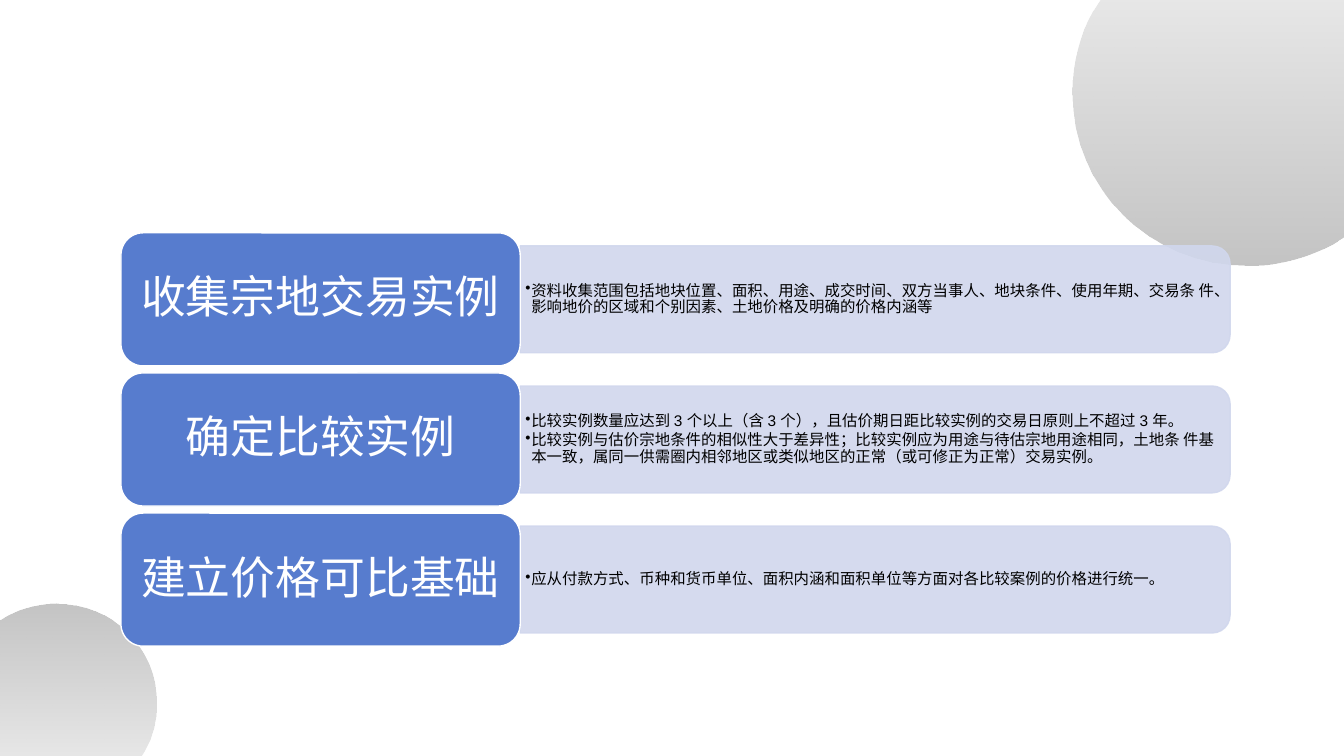
from lxml import etree
from pptx import Presentation, util as u
from pptx.dml.color import RGBColor
from pptx.enum import shapes, text
from pptx.oxml.ns import qn

W, H = 13.33, 7.5
WHITE = RGBColor(0xFF, 0xFF, 0xFF)
BLACK = RGBColor(0, 0, 0)
BLUE = RGBColor(0x57, 0x7C, 0xCE)
PALE = RGBColor(0xD1, 0xD7, 0xED)

# Circle cut by a corner, in hundredths of an inch: straight edges, then curves
CUT_EDGES = [(28, 0), (269, 0), (269, 234), (256, 242)]
CUT_CURVES = [  # two control points and an end point each
    [(231, 255), (203, 263), (173, 263)],
    [(77, 263), (0, 187), (0, 92)],
    [(0, 63), (7, 35), (21, 11)],
]

# Steps: left and top of the list, row pitch, sizes of the parts
LEFT, TOP, PITCH, ROW_H = 1.2, 2.31, 1.39, 1.32
LABEL_W, BAR_W, BAR_H = 3.96, 7.04, 1.06
STEPS = [
    ("收集宗地交易实例", [
        "资料收集范围包括地块位置、面积、用途、成交时间、双方当事人、地块条件、使用年期、交易条 件、"
        "影响地价的区域和个别因素、土地价格及明确的价格内涵等"]),
    ("确定比较实例", [
        "比较实例数量应达到 3 个以上（含 3 个），且估价期日距比较实例的交易日原则上不超过 3 年。",
        "比较实例与估价宗地条件的相似性大于差异性；比较实例应为用途与待估宗地用途相同，土地条 件基"
        "本一致，属同一供需圈内相邻地区或类似地区的正常（或可修正为正常）交易实例。"]),
    ("建立价格可比基础", [
        "应从付款方式、币种和货币单位、面积内涵和面积单位等方面对各比较案例的价格进行统一。"]),
]


def set_alpha(parent, percent):
    """Make every RGB colour below parent partly transparent."""
    for clr in parent.iter(qn("a:srgbClr")):
        etree.SubElement(clr, qn("a:alpha")).set("val", str(percent * 1000))


def add_circle(s, x, y, w, h, rotation=0):
    """Shaded circle cut by the slide's corner, filling the given box."""
    builder = s.shapes.build_freeform(*CUT_EDGES[0], scale=u.Inches(0.01))
    builder.add_line_segments(CUT_EDGES[1:] + [c[-1] for c in CUT_CURVES])
    sp = builder.convert_to_shape()

    # Bend the last segments
    segments = list(sp._element.iter(qn("a:lnTo")))
    curved = [g for g in segments[len(CUT_EDGES) - 1:]][:len(CUT_CURVES)]
    for segment, curve in zip(curved, CUT_CURVES):
        bend = etree.Element(qn("a:cubicBezTo"))
        for px, py in curve:
            pt = etree.SubElement(bend, qn("a:pt"))
            pt.set("x", str(px))
            pt.set("y", str(py))
        segment.getparent().replace(segment, bend)

    sp.left, sp.top, sp.width, sp.height = map(u.Inches, (x, y, w, h))
    sp.rotation = rotation
    sp.shadow.inherit = False
    sp.line.fill.background()
    sp.fill.gradient()
    sp.fill.gradient_angle = 270
    for stop, position, alpha in zip(sp.fill.gradient_stops, (0, 1), (10, 24)):
        stop.position = position
        stop.color.rgb = BLACK
        set_alpha(stop._gs, alpha)


def add_box(s, kind, x, y, w, h, fill, line):
    sp = s.shapes.add_shape(kind, *map(u.Inches, (x, y, w, h)))
    sp.shadow.inherit = False
    sp.fill.solid()
    sp.fill.fore_color.rgb = fill
    sp.line.color.rgb = line
    sp.line.width = u.Pt(1)
    return sp


def set_frame(tf, dx, dy):
    tf.word_wrap = True
    tf.vertical_anchor = text.MSO_ANCHOR.MIDDLE
    tf.margin_left = tf.margin_right = u.Inches(dx)
    tf.margin_top = tf.margin_bottom = u.Inches(dy)


def write(p, words, size, color, align, after):
    """One paragraph; the space after it is a percentage of the line."""
    p.alignment = align
    p.line_spacing = 0.9
    p.space_after = u.Pt(0)
    spacing = p._p.pPr.find(qn("a:spcAft"))
    spacing.remove(spacing[0])
    etree.SubElement(spacing, qn("a:spcPct")).set("val", str(after * 1000))
    r = p.add_run()
    r.text = words
    r.font.size = u.Pt(size)
    r.font.name = "Arial"
    r.font.color.rgb = color


def add_bullet(p):
    pPr = p._p.get_or_add_pPr()
    pPr.set("marL", str(u.Inches(0.06)))
    pPr.set("indent", str(-u.Inches(0.06)))
    etree.SubElement(pPr, qn("a:buChar")).set("char", "•")


def add_step(s, x, y, label, details):
    """Pale bar with bullets, and a blue label at its left."""
    bar_x, mid = x + LABEL_W, y + ROW_H / 2

    # Bar: an upright shape turned a quarter about its centre
    bar = add_box(s, shapes.MSO_SHAPE.ROUND_2_SAME_RECTANGLE,
                  bar_x + (BAR_W - BAR_H) / 2, mid - BAR_W / 2,
                  BAR_H, BAR_W, PALE, PALE)
    bar.rotation = 90
    set_alpha(bar._element.spPr, 90)

    # Bullets
    box = s.shapes.add_textbox(*map(u.Inches, (bar_x, mid - 0.48, BAR_W - 0.05, 0.96)))
    tf = box.text_frame
    set_frame(tf, 0.05, 0.02)
    for i, words in enumerate(details):
        p = tf.add_paragraph() if i else tf.paragraphs[0]
        write(p, words, 11, BLACK, text.PP_ALIGN.LEFT, 15)
        add_bullet(p)

    # Label
    sp = add_box(s, shapes.MSO_SHAPE.ROUNDED_RECTANGLE,
                 x, y, LABEL_W, ROW_H, BLUE, WHITE)
    set_frame(sp.text_frame, 0.13, 0.07)
    write(sp.text_frame.paragraphs[0], label, 32, WHITE, text.PP_ALIGN.CENTER, 35)


def main():
    prs = Presentation()
    prs.slide_width, prs.slide_height = u.Inches(W), u.Inches(H)
    s = prs.slides.add_slide(prs.slide_layouts[6])
    add_circle(s, W - 2.69, 0, 2.69, 2.63)
    add_circle(s, 0, H - 1.51, 1.55, 1.51, rotation=180)
    for i, (label, details) in enumerate(STEPS):
        add_step(s, LEFT, TOP + i * PITCH, label, details)
    prs.save("out.pptx")


if __name__ == "__main__":
    main()
